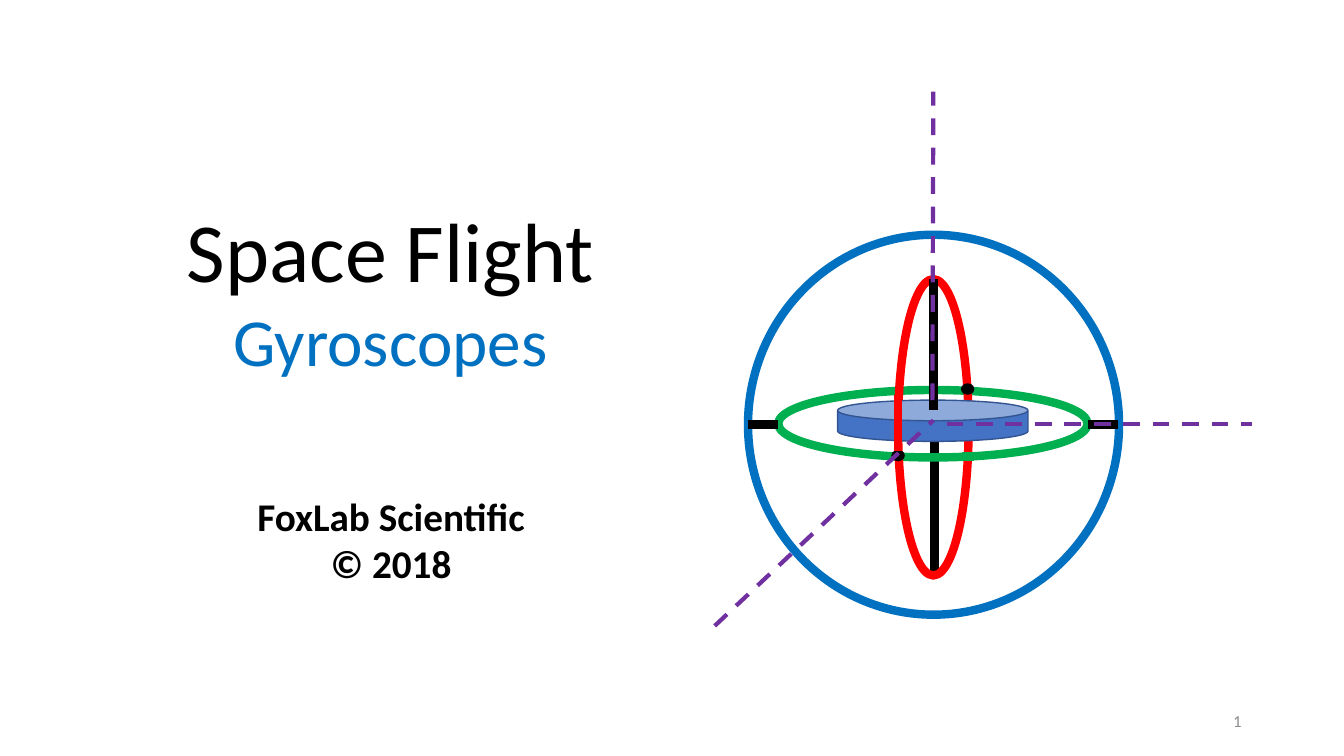
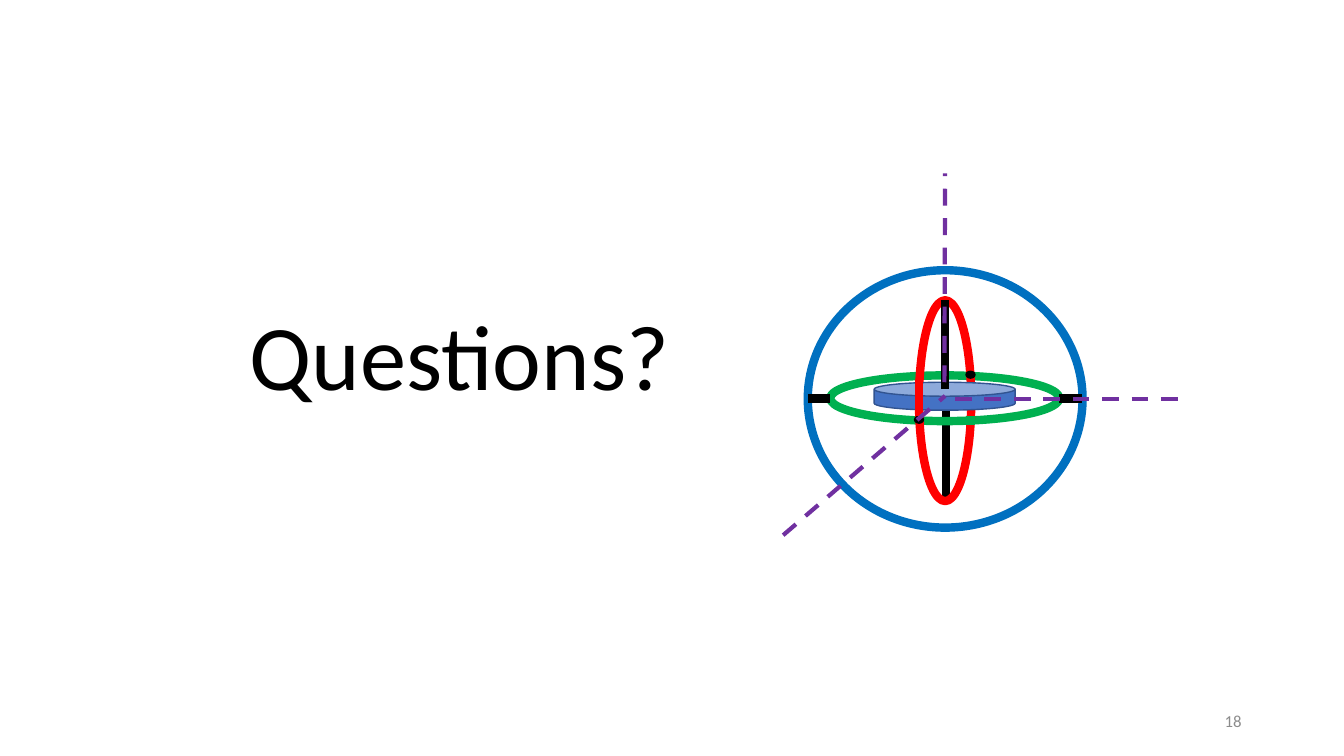
from lxml import etree
from pptx import Presentation
from pptx.dml.color import RGBColor
from pptx.enum.dml import MSO_LINE
from pptx.enum.shapes import MSO_CONNECTOR, MSO_SHAPE
from pptx.enum.text import MSO_ANCHOR, PP_ALIGN
from pptx.oxml.ns import qn
from pptx.util import Pt

STRAIGHT = MSO_CONNECTOR.STRAIGHT
ELLIPSE, CAN = MSO_SHAPE.OVAL, MSO_SHAPE.CAN
DASH = MSO_LINE.DASH
TOP, MIDDLE = MSO_ANCHOR.TOP, MSO_ANCHOR.MIDDLE
LEFT, CENTER, RIGHT = PP_ALIGN.LEFT, PP_ALIGN.CENTER, PP_ALIGN.RIGHT

BLACK, GRAY = "000000", "8C8C8C"
BLUE, GREEN, RED, PURPLE = "0070C0", "00B050", "FF0000", "7030A0"
DISC, DISC_EDGE = "4472C4", "325491"
FONT = "Calibri"
GYRO_WIDTH, GYRO_HEIGHT = 384, 381.6


def color(value):
    return RGBColor.from_string(value)


class Deck:
    """Holds the shared style and the slide being built."""

    def __init__(self):
        self.presentation = Presentation()
        self.presentation.slide_width = Pt(960)
        self.presentation.slide_height = Pt(540)
        self.slide = None

    def add_slide(self, number):
        layout = self.presentation.slide_layouts[6]
        self.slide = self.presentation.slides.add_slide(layout)
        self.text((678, 500.5, 216, 28.8), [(str(number), 12, GRAY)], RIGHT, MIDDLE)

    def text(self, box, lines, align=CENTER, anchor=TOP, bold=False):
        frame = self.slide.shapes.add_textbox(*map(Pt, box)).text_frame
        frame.word_wrap = True
        frame.vertical_anchor = anchor
        for index, (content, size, shade) in enumerate(lines):
            paragraph = frame.add_paragraph() if index else frame.paragraphs[0]
            paragraph.alignment = align
            run = paragraph.add_run()
            run.text = content
            formats = {"name": FONT, "size": Pt(size), "bold": bold}
            for name, value in formats.items():
                setattr(run.font, name, value)
            run.font.color.rgb = color(shade)

    def shape(self, kind, box, line, width=6, fill=None):
        shape = self.slide.shapes.add_shape(kind, *map(Pt, box))
        shape.shadow.inherit = False
        if fill:
            shape.fill.solid()
            shape.fill.fore_color.rgb = color(fill)
        else:
            shape.fill.background()
        shape.line.color.rgb = color(line)
        shape.line.width = Pt(width)
        return shape

    def line(self, start, end, shade, width=6, dash=None):
        connector = self.slide.shapes.add_connector(STRAIGHT, *map(Pt, start + end))
        connector.line.color.rgb = color(shade)
        connector.line.width = Pt(width)
        connector.line.dash_style = dash
        etree.SubElement(connector._element.spPr, qn("a:effectLst"))

    def gyroscope(self, left, top, width, height):
        scale_x, scale_y = width / GYRO_WIDTH, height / GYRO_HEIGHT

        def point(x, y):
            return left + x * scale_x, top + y * scale_y

        def box(x, y, box_width, box_height):
            return point(x, y) + (box_width * scale_x, box_height * scale_y)

        self.line(point(157, 344), point(157, 249), BLACK)
        rings = [
            (GREEN, (45.4, 213.1, 221, 48.2)),
            (RED, (131, 133.9, 50.4, 211.7)),
            (BLUE, (23.8, 102.2, 265, 271.4)),
        ]
        for shade, ring in rings:
            self.shape(ELLIPSE, box(*ring), shade)
        for x, y in [(126.7, 256.3), (176.4, 208.8)]:
            self.shape(ELLIPSE, box(x, y, 8.6, 7.2), BLACK, 1, BLACK)
        for x in (266.4, 23.8):
            self.line(point(x, 237.6), point(x + 21.6, 237.6), BLACK)
        disc = self.shape(CAN, box(87.8, 220.3, 136, 29.5), DISC_EDGE, 1, DISC)
        disc.adjustments[0] = 0.53
        self.line(point(131, 216.7), point(131, 256.3), RED)
        self.line(point(156.2, 227.5), point(156.2, 133.9), BLACK)
        axes = [
            ((0, 381.6), (156.2, 234.7)),
            ((165.6, 237.6), (384, 237.6)),
            ((155.5, 220.3), (156.2, 0)),
        ]
        for start, end in axes:
            self.line(point(*start), point(*end), PURPLE, 3, DASH)
        self.line(point(176.4, 260.6), point(185, 260.6), GREEN)


def main():
    deck = Deck()

    deck.add_slide(1)
    deck.text((102.2, 138.2, 353.5, 138.2),
              [("Space Flight", 60, BLACK), ("Gyroscopes", 48, BLUE)])
    deck.text((149, 347.8, 260.6, 74.9),
              [("FoxLab Scientific", 28, BLACK), ("© 2018", 28, BLACK)], bold=True)
    deck.gyroscope(510.5, 65.5, 384, 381.6)

    deck.add_slide(18)
    deck.text((171.4, 209.5, 358.6, 87.1), [("Questions?", 66, BLACK)], LEFT)
    deck.gyroscope(559.4, 123.8, 284.4, 258.5)

    deck.presentation.save("out.pptx")


if __name__ == "__main__":
    main()
